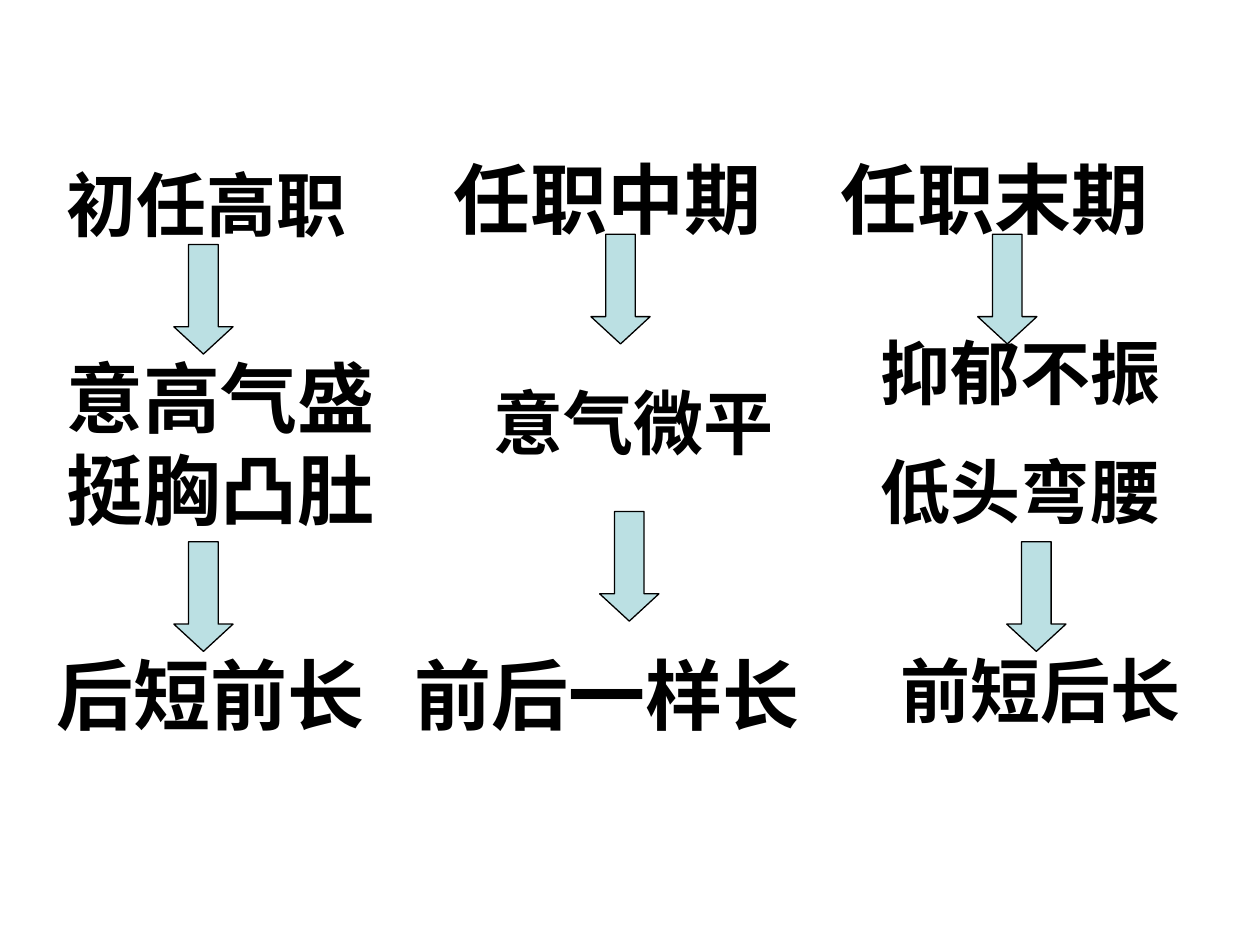
from pptx import Presentation
from pptx.dml.color import RGBColor
from pptx.enum.shapes import MSO_SHAPE
from pptx.util import Inches, Pt

BLACK = RGBColor(0x00, 0x00, 0x00)
PALE_TEAL = RGBColor(0xBB, 0xE0, 0xE3)
FONT = "Times New Roman"
ARROW_WIDTH, ARROW_HEIGHT = 0.47, 0.87

# Each column: left, top, stages and arrows. Offsets are from the column's corner.
# Stage: (x, y, width, height, font size, lines); arrow: (x, y).
COLUMNS = [
    (0.35, 1.15,
     [(0.08, 0.08, 3.7, 0.77, 40, ["初任高职"]),
      (0.08, 1.58, 3.15, 1.57, 44, ["意高气盛挺胸凸肚"]),
      (0, 3.94, 3.31, 0.83, 44, ["后短前长"])],
     [(1.03, 0.79), (1.03, 3.15)]),
    (3.19, 1.15,
     [(0.31, 0, 3.39, 0.83, 44, ["任职中期"]),
      (0.63, 1.81, 2.44, 0.77, 40, ["意气微平"]),
      (0, 3.94, 4.17, 0.83, 44, ["前后一样长"])],
     [(1.5, 0.71), (1.57, 2.91)]),
    (6.57, 1.15,
     [(0, 0, 4.57, 0.83, 44, ["任职末期"]),
      (0.32, 1.42, 4.25, 1.77, 40, ["抑郁不振", "低头弯腰"]),
      (0.48, 3.94, 3.43, 1.77, 40, ["前短后长"])],
     [(1.19, 0.71), (1.42, 3.15)]),
]


def add_stage(slide, left, top, width, height, size, lines):
    box = slide.shapes.add_textbox(
        Inches(left), Inches(top), Inches(width), Inches(height))
    frame = box.text_frame
    frame.word_wrap = True
    frame.text = "\n".join(lines)
    for index, paragraph in enumerate(frame.paragraphs):
        if index:
            paragraph.space_before = Pt(size / 2)
        paragraph.font.name = FONT
        paragraph.font.size = Pt(size)
        paragraph.font.bold = True
        paragraph.font.color.rgb = BLACK


def add_down_arrow(slide, left, top):
    arrow = slide.shapes.add_shape(
        MSO_SHAPE.DOWN_ARROW, Inches(left), Inches(top),
        Inches(ARROW_WIDTH), Inches(ARROW_HEIGHT))
    arrow.adjustments[0] = 0.5
    arrow.adjustments[1] = 0.46
    arrow.shadow.inherit = False
    arrow.fill.solid()
    arrow.fill.fore_color.rgb = PALE_TEAL
    arrow.line.color.rgb = BLACK
    arrow.line.width = Pt(0.75)


def add_column(slide, left, top, stages, arrows):
    for x, y, *details in stages:
        add_stage(slide, left + x, top + y, *details)
    for x, y in arrows:
        add_down_arrow(slide, left + x, top + y)


def main():
    presentation = Presentation()
    presentation.slide_width = Inches(10)
    presentation.slide_height = Inches(7.5)
    slide = presentation.slides.add_slide(presentation.slide_layouts[6])
    for column in COLUMNS:
        add_column(slide, *column)
    presentation.save("out.pptx")


if __name__ == "__main__":
    main()
